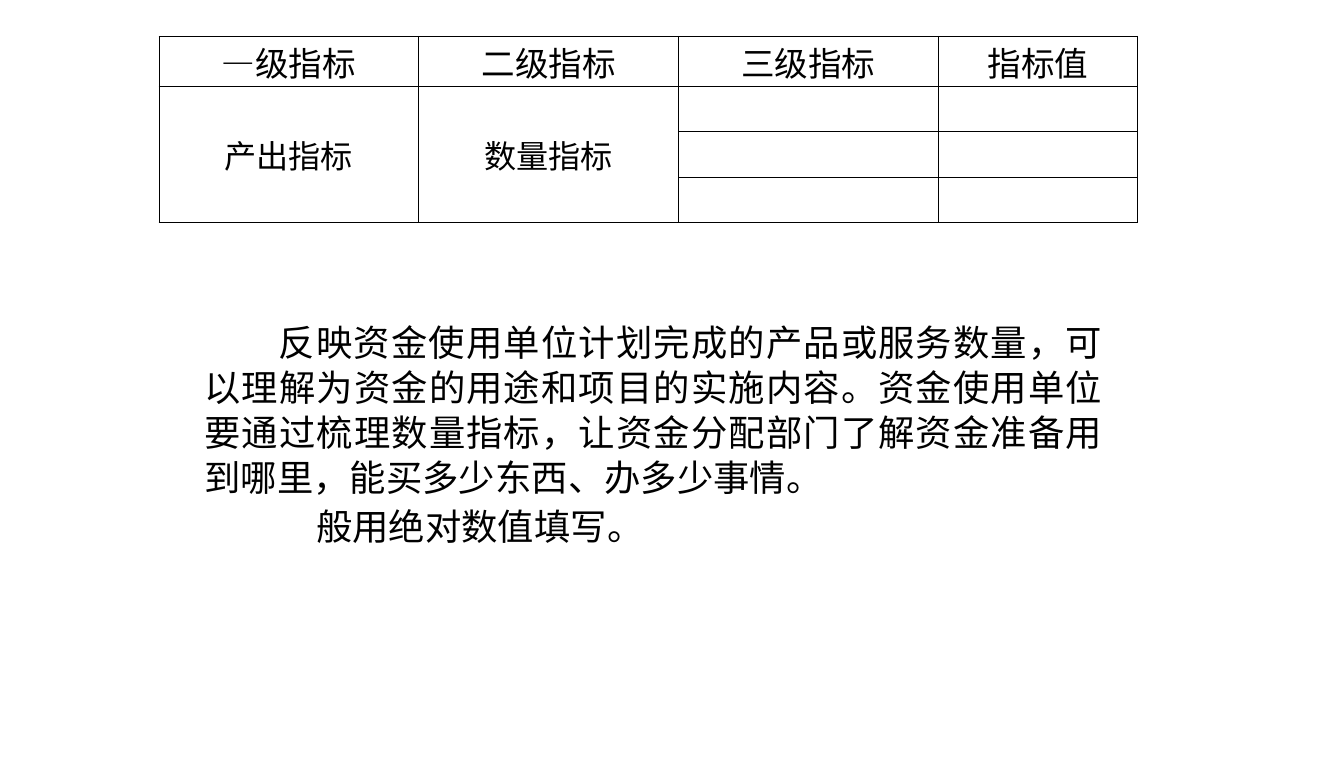
from lxml import etree
from pptx import Presentation
from pptx.dml.color import RGBColor
from pptx.enum.text import MSO_ANCHOR, PP_ALIGN
from pptx.oxml.ns import qn
from pptx.util import Inches, Pt

BLACK = RGBColor(0, 0, 0)
WHITE = RGBColor(255, 255, 255)
SC = "Noto Sans CJK SC"
TC = "Noto Sans CJK TC"
LEFT, CENTER, JUST = PP_ALIGN.LEFT, PP_ALIGN.CENTER, PP_ALIGN.JUSTIFY
MIDDLE, BOTTOM = MSO_ANCHOR.MIDDLE, MSO_ANCHOR.BOTTOM

HEADS = ["—级指标", "二级指标", "三级指标", "指标值"]
GROUPS = ["产出指标", "数量指标"]
WIDTHS = [2.58, 2.58, 2.58, 1.98]
HEIGHTS = [0.5, 0.45, 0.45, 0.45]
PROSE = (
    "反映资金使用单位计划完成的产品或服务数量，可 "
    "以理解为资金的用途和项目的实施内容。资金使用单位 "
    "要通过梳理数量指标，让资金分配部门了解资金准备用 "
    "到哪里，能买多少东西、办多少事情。"
)
HINT = "般用绝对数值填写。"


class Page:
    """Holds the slide and draws its table and text in one style."""

    def __init__(self, slide):
        self.slide = slide

    def style(self, para, size, face, align):
        para.alignment = align
        for run in para.runs:
            font = run.font
            font.size, font.name = Pt(size), face
            font.color.rgb = BLACK
            east = etree.SubElement(font._element, qn("a:ea"))
            east.set("typeface", face)

    def bare(self, item):
        item.margin_left = item.margin_right = 0
        item.margin_top = item.margin_bottom = 0

    def border(self, cell):
        props = cell._tc.get_or_add_tcPr()
        for spot, side in enumerate(["lnL", "lnR", "lnT", "lnB"]):
            line = etree.Element(qn("a:" + side), w=str(Pt(0.75)))
            fill = etree.SubElement(line, qn("a:solidFill"))
            etree.SubElement(fill, qn("a:srgbClr"), val=str(BLACK))
            props.insert(spot, line)

    def label(self, cell, text, size, face, anchor):
        cell.text_frame.text = text
        cell.vertical_anchor = anchor
        self.style(cell.text_frame.paragraphs[0], size, face, CENTER)

    def table(self, left, top):
        frame = self.slide.shapes.add_table(
            len(HEIGHTS), len(WIDTHS), Inches(left), Inches(top),
            Inches(sum(WIDTHS)), Inches(sum(HEIGHTS)))
        grid = frame.table
        grid.first_row = grid.horz_banding = False
        for col, width in zip(grid.columns, WIDTHS):
            col.width = Inches(width)
        for row, height in zip(grid.rows, HEIGHTS):
            row.height = Inches(height)
        for cell in grid.iter_cells():
            self.bare(cell)
            cell.fill.solid()
            cell.fill.fore_color.rgb = WHITE
            self.border(cell)
        for col, text in enumerate(HEADS):
            self.label(grid.cell(0, col), text, 24, SC, BOTTOM)
        for col, text in enumerate(GROUPS):
            cell = grid.cell(1, col)
            cell.merge(grid.cell(3, col))
            self.label(cell, text, 23, TC, MIDDLE)

    def text(self, text, left, top, width, height, align=LEFT, wrap=False):
        box = self.slide.shapes.add_textbox(
            Inches(left), Inches(top), Inches(width), Inches(height))
        box.fill.solid()
        box.fill.fore_color.rgb = WHITE
        frame = box.text_frame
        self.bare(frame)
        frame.word_wrap = wrap
        frame.text = text
        para = frame.paragraphs[0]
        self.style(para, 26, SC, align)
        return para

    def prose(self, text, left, top, width, height):
        para = self.text(text, left, top, width, height, JUST, True)
        para.line_spacing = Pt(32.1)
        props = para._p.get_or_add_pPr()
        props.set("marL", "0")
        props.set("indent", str(Inches(0.74)))


def main():
    deck = Presentation()
    deck.slide_width, deck.slide_height = Inches(13.35), Inches(7.53)
    page = Page(deck.slides.add_slide(deck.slide_layouts[6]))
    page.table(1.58, 0.36)
    page.prose(PROSE, 2.03, 3.17, 8.93, 1.79)
    page.text(HINT, 3.14, 5.01, 3.12, 0.4)
    deck.save("out.pptx")


if __name__ == "__main__":
    main()
